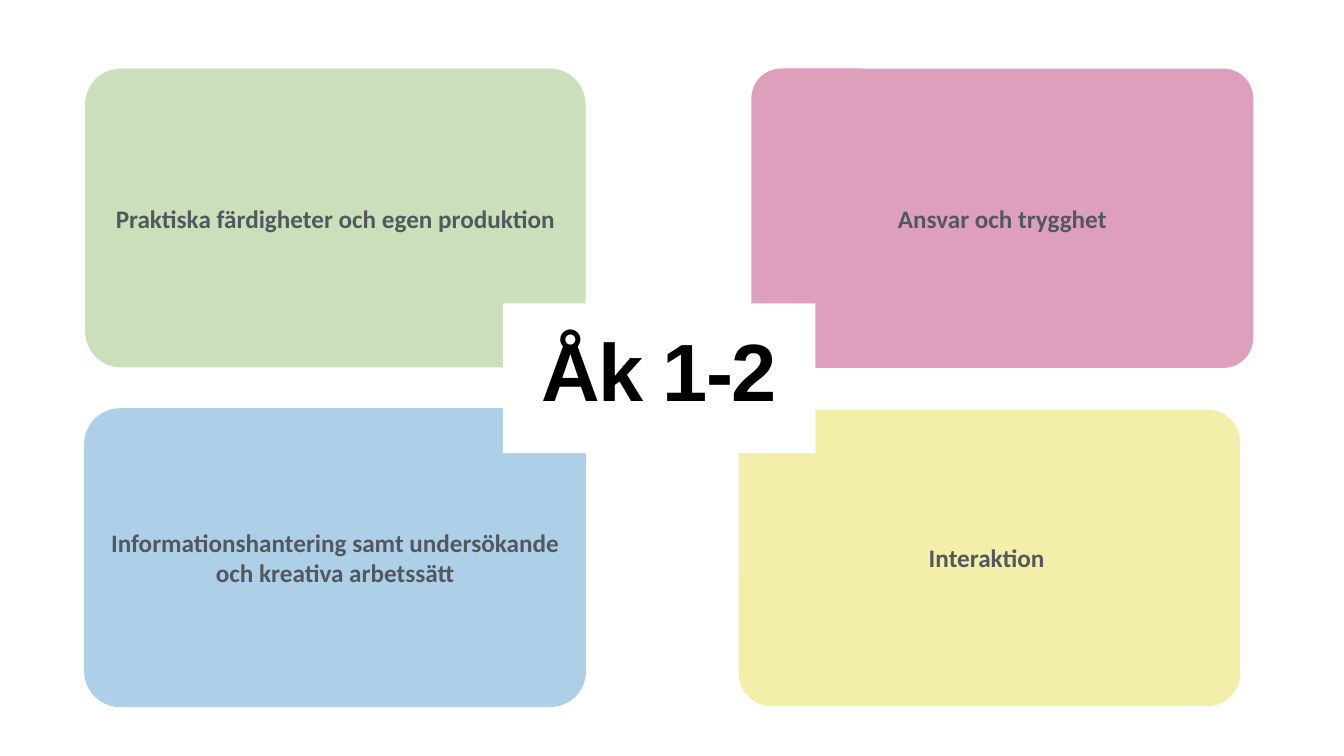
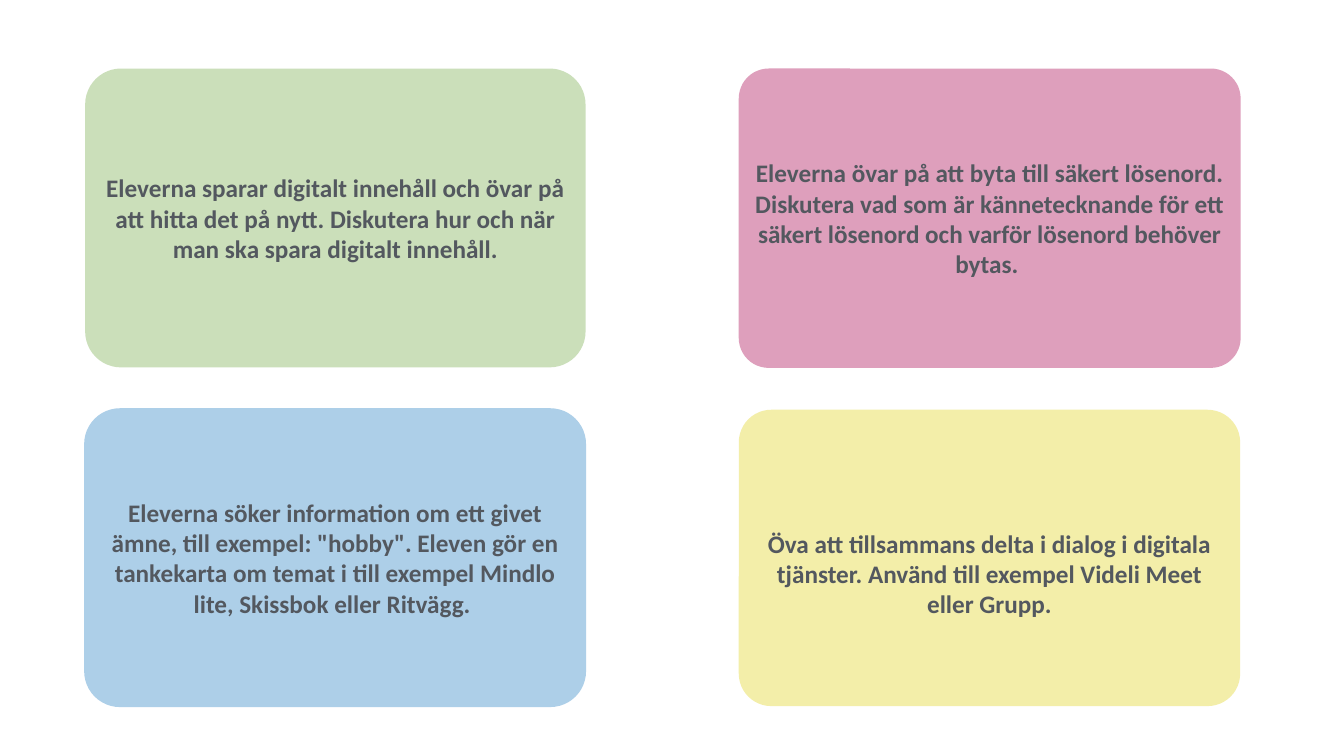
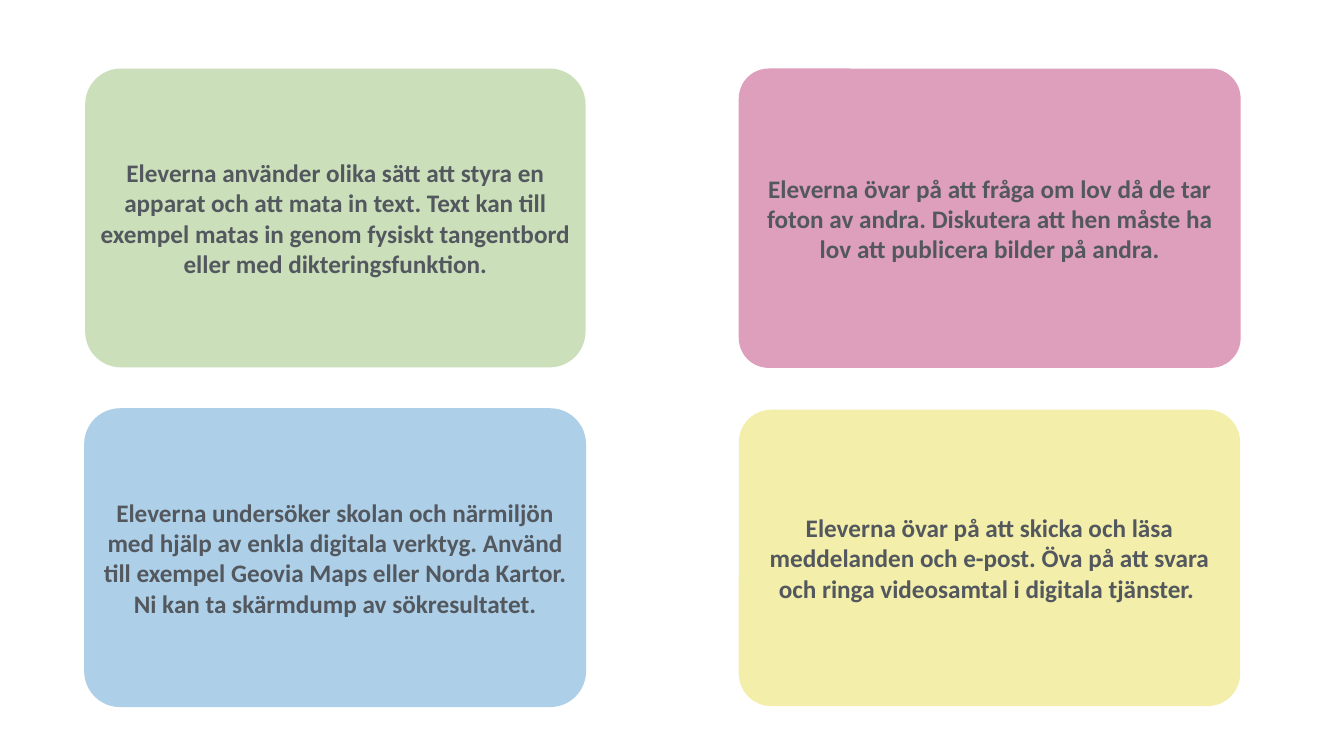
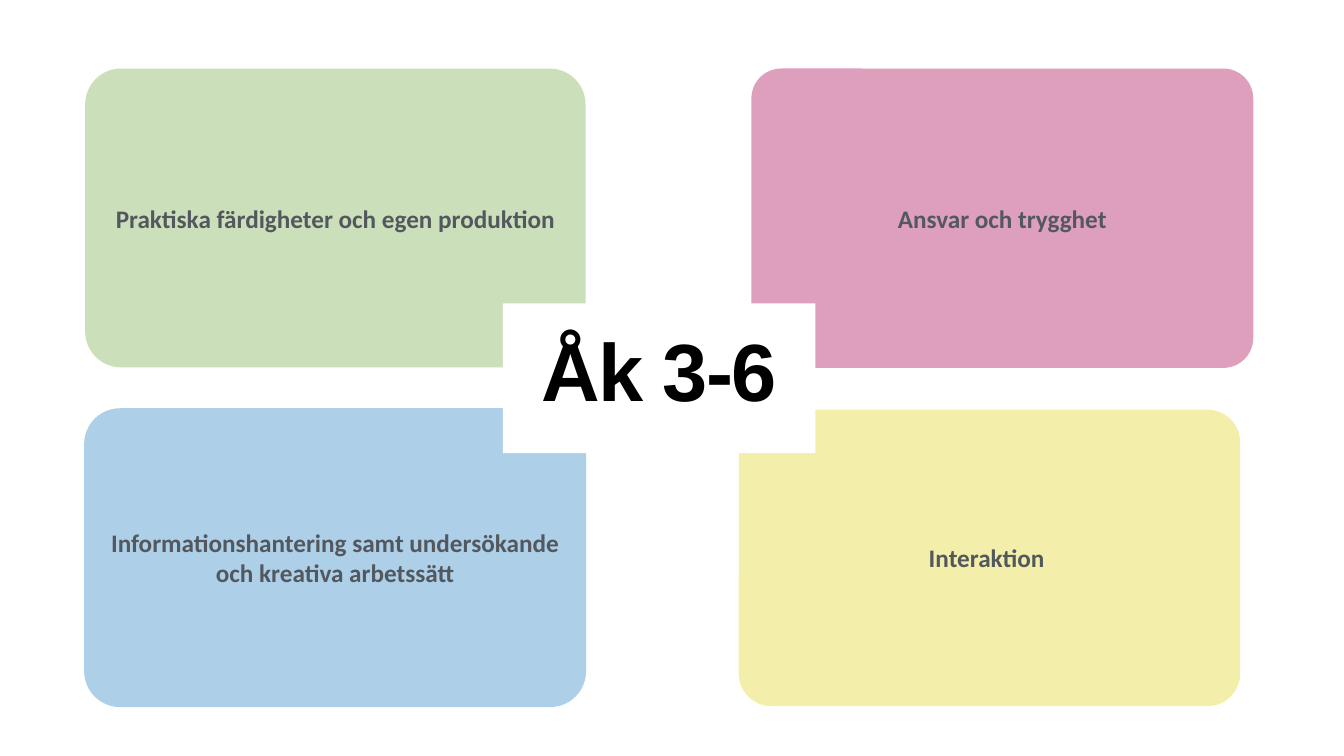
from lxml import etree
from pptx import Presentation
from pptx.dml.color import RGBColor
from pptx.enum.shapes import MSO_SHAPE
from pptx.enum.text import MSO_ANCHOR, MSO_AUTO_SIZE, PP_ALIGN
from pptx.oxml.ns import qn
from pptx.util import Emu, Pt

ROUNDED = MSO_SHAPE.ROUNDED_RECTANGLE
MIDDLE = MSO_ANCHOR.MIDDLE
CENTER = PP_ALIGN.CENTER
NO_AUTOFIT = MSO_AUTO_SIZE.NONE

# Shared look: 100 px to the inch
PX = 9144
SLIDE_SIZE = (2667, 1500)
INSET = 6
TITLE_ONLY, BLANK = 5, 6
CARD_TEXT, BLACK, WHITE = "53585F", "000000", "FFFFFF"
GRADE_BOX = (998, 602, 620, 297)

# Each competence area: box, corner rounding, fill
AREAS = {
    "skills": ((169, 136, 993, 593), 0.12, "CBDFBA"),
    "research": ((167, 810, 996, 593), 0.12, "ADCFE8"),
    "interaction": ((1466, 813, 995, 588), 0.11, "F3EEA9"),
    "safety": ((1466, 136, 996, 594), 0.1, "DE9FBC"),
}
OVERVIEW_SHIFT = {"safety": 25}
LINE_HEIGHT = 61

AREA_NAMES = {
    "skills": "Praktiska färdigheter och egen produktion",
    "research": "Informationshantering samt undersökande och kreativa arbetssätt",
    "interaction": "Interaktion ",
    "safety": "Ansvar och trygghet",
}
SAVING_AND_PASSWORDS = {
    "skills": "Eleverna sparar digitalt innehåll och övar på att hitta det på nytt. "
              "Diskutera hur och när man ska spara digitalt innehåll.",
    "research": "Eleverna söker information om ett givet ämne, till exempel: \"hobby\". "
                "Eleven gör en tankekarta om temat i till exempel Mindlo lite, "
                "Skissbok eller Ritvägg. ",
    "interaction": "Öva att tillsammans delta i dialog i digitala tjänster. "
                   "Använd till exempel Videli Meet eller Grupp.",
    "safety": "Eleverna övar på att byta till säkert lösenord. Diskutera vad som är "
              "kännetecknande för ett säkert lösenord och varför lösenord behöver bytas. ",
}
INPUT_AND_PHOTOS = {
    "skills": "Eleverna använder olika sätt att styra en apparat och att mata in text. "
              "Text kan till exempel matas in genom fysiskt tangentbord eller med "
              "dikteringsfunktion.",
    "research": "Eleverna undersöker skolan och närmiljön med hjälp av enkla digitala "
                "verktyg. Använd till exempel Geovia Maps eller Norda Kartor. "
                "Ni kan ta skärmdump av sökresultatet.",
    "interaction": "Eleverna övar på att skicka och läsa meddelanden och e-post. "
                   "Öva på att svara och ringa videosamtal i digitala tjänster. ",
    "safety": "Eleverna övar på att fråga om lov då de tar foton av andra. "
              "Diskutera att hen måste ha lov att publicera bilder på andra.",
}


def px(length):
    return Emu(length * PX)


def color(hex_code):
    return RGBColor.from_string(hex_code)


def style_box(box, rounding, fill, text, font_name, size, text_color):
    """Fill a rounded box and set its single centred paragraph."""
    box.adjustments[0] = rounding
    box.fill.solid()
    box.fill.fore_color.rgb = color(fill)
    box.line.fill.background()
    box.shadow.inherit = False

    frame = box.text_frame
    frame.word_wrap = True
    frame.auto_size = NO_AUTOFIT
    frame.vertical_anchor = MIDDLE
    frame.margin_left = frame.margin_right = px(INSET)
    frame.margin_top = frame.margin_bottom = px(INSET)
    frame.text = text
    paragraph = frame.paragraphs[0]
    paragraph.alignment = CENTER
    font = paragraph.font
    font.name, font.size, font.bold = font_name, Pt(size), True
    font.color.rgb = color(text_color)
    return paragraph


def add_cards(slide, texts, shifts=None, lowered=()):
    """Add one card per area, moved right or with lowered text where asked."""
    for area, (bounds, rounding, fill) in AREAS.items():
        left, top, width, height = bounds
        left += (shifts or {}).get(area, 0)
        card = slide.shapes.add_shape(ROUNDED, px(left), px(top), px(width), px(height))
        style_box(card, rounding, fill, texts[area], "Calibri", 36, CARD_TEXT)
        if area in lowered:
            card.text_frame.margin_top = px(INSET + LINE_HEIGHT)


def set_grade_title(slide, grade):
    """Turn the title placeholder into a rounded badge in front of the cards."""
    badge = slide.shapes.title
    badge.left, badge.top, badge.width, badge.height = map(px, GRADE_BOX)
    geometry = etree.SubElement(badge.element.spPr, qn("a:prstGeom"), prst="roundRect")
    etree.SubElement(geometry, qn("a:avLst"))
    paragraph = style_box(badge, 0.1, WHITE, grade, "Arial", 116, BLACK)
    paragraph.line_spacing = 0.8
    paragraph.runs[0].font._element.set("spc", "-230")
    badge.element.getparent().append(badge.element)


def add_overview(prs, grade):
    slide = prs.slides.add_slide(prs.slide_layouts[TITLE_ONLY])
    add_cards(slide, AREA_NAMES, shifts=OVERVIEW_SHIFT)
    set_grade_title(slide, grade)


def add_activities(prs, texts, lowered=()):
    slide = prs.slides.add_slide(prs.slide_layouts[BLANK])
    add_cards(slide, texts, lowered=lowered)


def main():
    prs = Presentation()
    prs.slide_width, prs.slide_height = map(px, SLIDE_SIZE)
    add_overview(prs, "Åk 1-2")
    add_activities(prs, SAVING_AND_PASSWORDS, lowered=("interaction",))
    add_activities(prs, INPUT_AND_PHOTOS)
    add_overview(prs, "Åk 3-6")
    prs.save("out.pptx")


if __name__ == "__main__":
    main()
